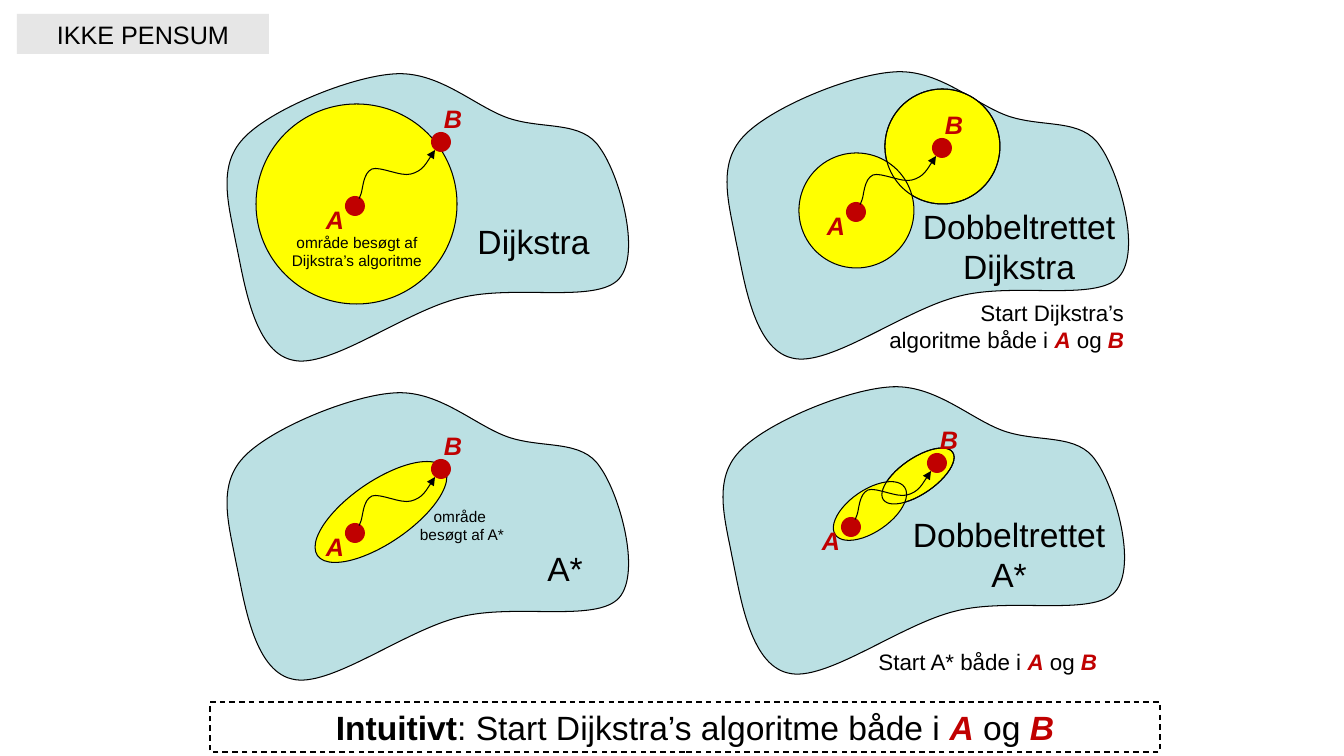
from lxml import etree
from pptx import Presentation
from pptx.dml.color import RGBColor
from pptx.enum.dml import MSO_LINE
from pptx.enum.shapes import MSO_SHAPE
from pptx.enum.text import MSO_ANCHOR, MSO_AUTO_SIZE, PP_ALIGN
from pptx.oxml.ns import qn
from pptx.util import Pt

PX = 914400 / 100.8
FONT = "Arial"
TILT = 325.6
ELLIPSE, RECTANGLE = MSO_SHAPE.OVAL, MSO_SHAPE.RECTANGLE
LEFT, CENTER, RIGHT = PP_ALIGN.LEFT, PP_ALIGN.CENTER, PP_ALIGN.RIGHT
MIDDLE = MSO_ANCHOR.MIDDLE
GROW, FIXED = MSO_AUTO_SIZE.SHAPE_TO_FIT_TEXT, MSO_AUTO_SIZE.NONE
COLORS = {"region": "BBE0E3", "visited": "FFFF00", "node": "C00000",
          "tag": "E6E6E6", "ink": "000000"}
NODES = ("A", "B")

# Start point, then two control points and an end point for each curve.
REGION = [(9, 170),
          (2, 133), (-10, 94), (16, 66), (42, 37), (123, 4), (166, 1),
          (211, -3), (247, 33), (281, 45), (316, 57), (355, 47), (373, 75),
          (392, 101), (415, 180), (392, 206), (369, 231), (288, 211), (233, 225),
          (178, 238), (102, 297), (65, 287), (26, 278), (17, 207), (9, 170)]
ROUTE = [(0, 48), (0, 49), (0, 49), (2, 44), (4, 39), (4, 23), (13, 19),
         (21, 16), (42, 27), (52, 24), (64, 21), (76, 0), (76, 0)]


def px(value):
    return round(value * PX)


def color(name):
    return RGBColor.from_string(COLORS[name])


def paint(shape, fill=None, line=None, width=0.75):
    shape.shadow.inherit = False
    if fill:
        shape.fill.solid()
        shape.fill.fore_color.rgb = color(fill)
    else:
        shape.fill.background()
    if line:
        shape.line.color.rgb = color(line)
        shape.line.width = Pt(width)
    else:
        shape.line.fill.background()


def place(shape, box):
    shape.left, shape.top, shape.width, shape.height = map(px, box)


def add_curve(slide, points, box, closed=False):
    """Draw cubic curves through points given relative to the box."""
    left, top, width, height = box
    builder = slide.shapes.build_freeform(*points[0], scale=PX)
    builder.add_line_segments(points[1:], close=closed)
    curve = builder.convert_to_shape(px(left), px(top))
    place(curve, box)
    outline = curve.element.find(".//" + qn("a:path"))
    outline.set("w", str(width))
    outline.set("h", str(height))
    for point, (x, y) in zip(outline.iter(qn("a:pt")), points):
        point.set("x", str(x))
        point.set("y", str(y))
    segments = outline.findall(qn("a:lnTo"))
    for first in range(0, len(segments), 3):
        bezier = etree.Element(qn("a:cubicBezTo"))
        segments[first].addprevious(bezier)
        for segment in segments[first:first + 3]:
            bezier.append(segment[0])
            outline.remove(segment)
    return curve


def add_region(slide, left, top):
    region = add_curve(slide, REGION, (left, top, 402, 288), closed=True)
    paint(region, "region", "ink")


def add_shape(slide, kind, box, fill=None, line=None, rotation=0, width=0.75):
    shape = slide.shapes.add_shape(kind, *map(px, box))
    shape.rotation = rotation
    paint(shape, fill, line, width)
    return shape


def write(shape, pieces, size, align=CENTER, indent=0, autosize=GROW):
    """Write the pieces as runs; node letters and the lead word stand out."""
    frame = shape.text_frame
    frame.word_wrap = True
    frame.auto_size = autosize
    paragraph = frame.paragraphs[0]
    paragraph.text = pieces[0]
    for piece in pieces[1:]:
        paragraph.add_run().text = piece
    paragraph.alignment = align
    if indent:
        paragraph._p.get_or_add_pPr().set("marL", str(px(indent)))
    for line_break in paragraph._p.findall(qn("a:br")):
        etree.SubElement(line_break, qn("a:rPr"), sz=str(size * 100))
    for run in paragraph.runs:
        is_node = run.text in NODES
        run.font.name = FONT
        run.font.size = Pt(size)
        run.font.bold = is_node or run.text == "Intuitivt"
        run.font.italic = is_node
        run.font.color.rgb = color("node" if is_node else "ink")


def add_label(slide, box, pieces, size, align=CENTER, indent=0):
    label = slide.shapes.add_textbox(*map(px, box))
    write(label, pieces, size, align, indent)


def add_heading(slide, box, text):
    heading = slide.shapes.add_textbox(*map(px, box))
    heading.text_frame.vertical_anchor = MIDDLE
    write(heading, [text], 24, autosize=FIXED)


def add_route(slide, left, top):
    """Draw nodes A and B with the arrow between them; A's dot is at left, top."""
    for name, (dot_x, dot_y), (name_x, name_y) in zip(
            NODES, ((0, 0), (86, -64)), ((-29, 3), (89, -98))):
        add_shape(slide, ELLIPSE, (left + dot_x, top + dot_y, 20, 20), "node")
        add_label(slide, (left + name_x, top + name_y, 68, 40), [name], 18, LEFT)
    arrow = add_curve(slide, ROUTE, (left + 14, top - 46, 76, 49))
    paint(arrow, line="ink")
    etree.SubElement(arrow.line._get_or_add_ln(), qn("a:tailEnd"), type="triangle")


def add_two_searches(slide, from_a, from_b):
    """Draw both visited areas, with the outline of B's kept in front."""
    for box, fill in ((from_b, "visited"), (from_a, "visited"), (from_b, None)):
        add_shape(slide, ELLIPSE, box, fill, "ink", TILT)


def add_dijkstra(slide):
    add_region(slide, 227, 73)
    add_shape(slide, ELLIPSE, (256, 104, 201, 200), "visited", "ink")
    add_route(slide, 345, 196)
    add_label(slide, (269, 228, 176, 47),
              ["område besøgt af Dijkstra’s algoritme"], 11)
    title = slide.shapes.title
    place(title, (452, 211, 163, 60))
    title.text_frame.vertical_anchor = MIDDLE
    write(title, ["Dijkstra"], 24, autosize=FIXED)
    title.element.getparent().append(title.element)


def add_a_star(slide):
    add_region(slide, 227, 392)
    add_shape(slide, ELLIPSE, (304, 481, 154, 62), "visited", "ink", TILT)
    add_route(slide, 345, 523)
    add_label(slide, (374, 502, 176, 47), ["område \vbesøgt af A*"], 11)
    add_heading(slide, (528, 545, 74, 46), "A*")


def add_two_way_dijkstra(slide):
    add_region(slide, 727, 71)
    add_two_searches(slide, (799, 153, 115, 115), (885, 89, 115, 115))
    add_route(slide, 846, 202)
    add_heading(slide, (911, 205, 216, 82), "Dobbeltrettet Dijkstra")
    add_label(slide, (846, 294, 288, 65),
              ["Start Dijkstra’s\v algoritme både i ", "A", " og ", "B"],
              16, RIGHT, 20)


def add_two_way_a_star(slide):
    add_region(slide, 723, 386)
    add_two_searches(slide, (828, 490, 84, 42), (876, 458, 84, 36))
    add_route(slide, 841, 517)
    add_heading(slide, (901, 513, 216, 82), "Dobbeltrettet A*")
    add_label(slide, (819, 643, 288, 37),
              ["Start A* både i ", "A", " og ", "B"], 16, RIGHT, 20)


def main():
    deck = Presentation()
    deck.slide_width, deck.slide_height = px(1344), px(756)
    slide = deck.slides.add_slide(deck.slide_layouts[5])
    add_dijkstra(slide)
    add_two_way_dijkstra(slide)
    add_a_star(slide)
    add_two_way_a_star(slide)
    tag = add_shape(slide, RECTANGLE, (17, 14, 252, 40), "tag")
    write(tag, ["IKKE PENSUM"], 18)
    summary = add_shape(slide, RECTANGLE, (210, 702, 950, 50), line="ink", width=1)
    summary.line.dash_style = MSO_LINE.DASH
    write(summary, ["Intuitivt", ": Start Dijkstra’s algoritme både i ",
                    "A", " og ", "B"], 24, indent=20)
    deck.save("out.pptx")


if __name__ == "__main__":
    main()
